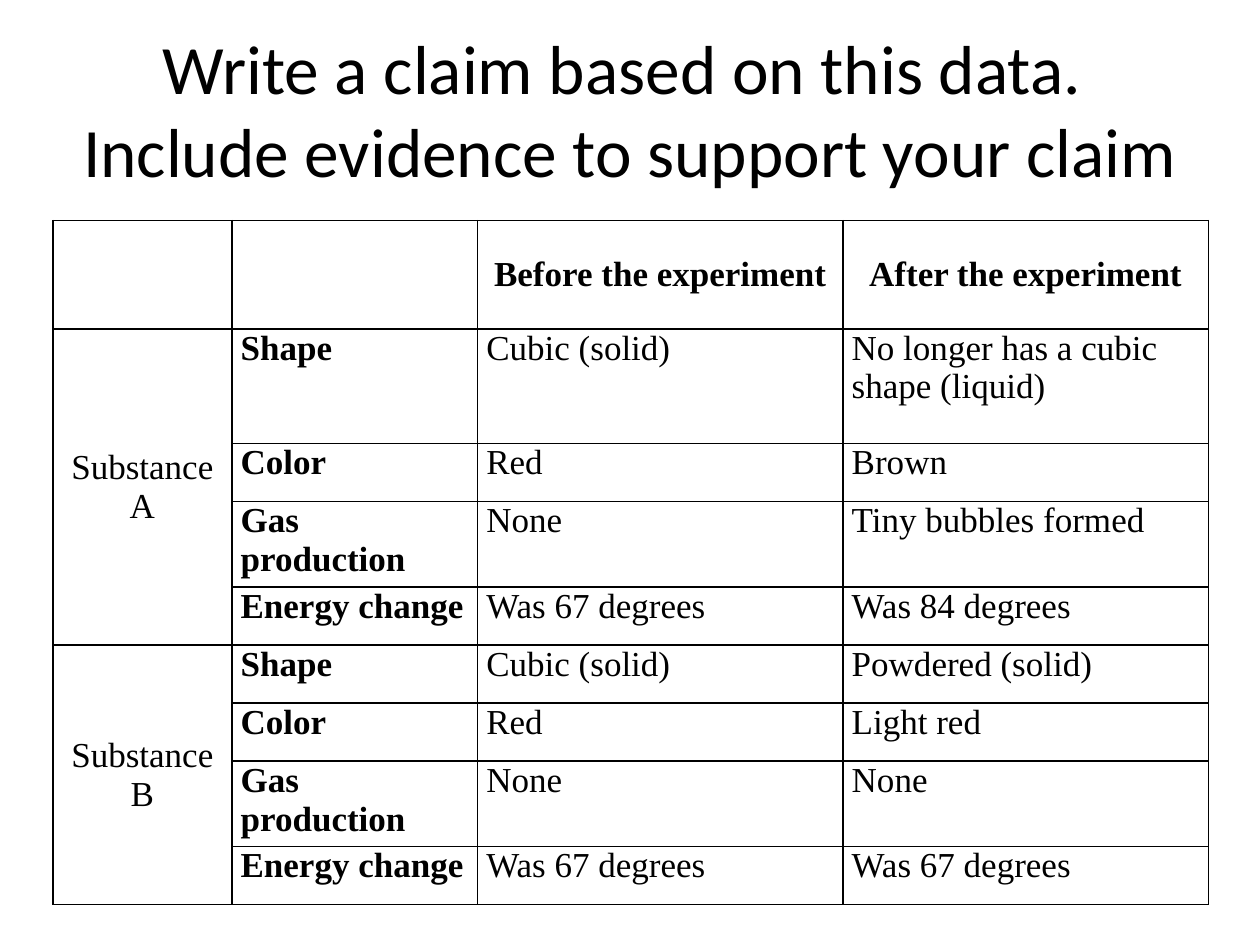
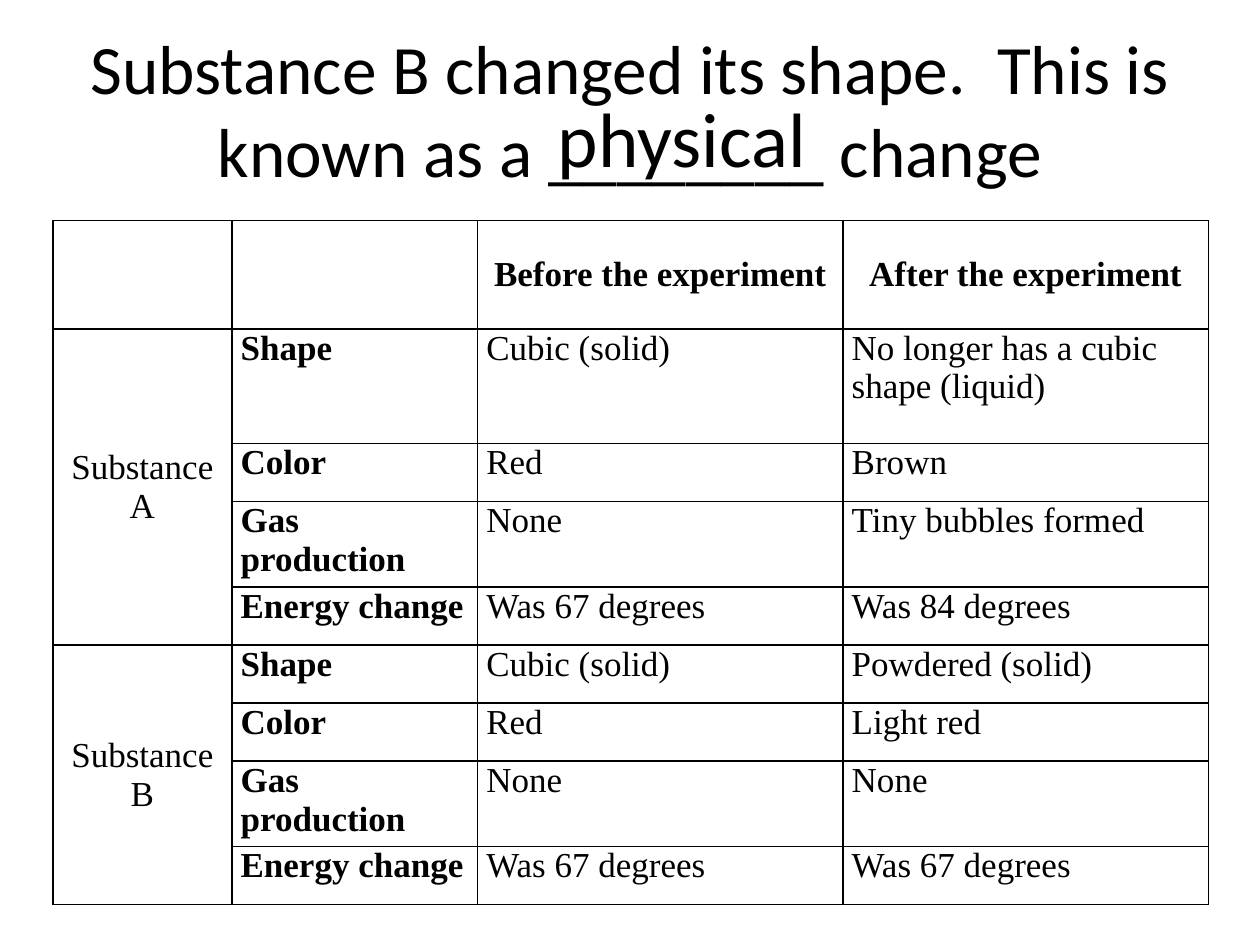
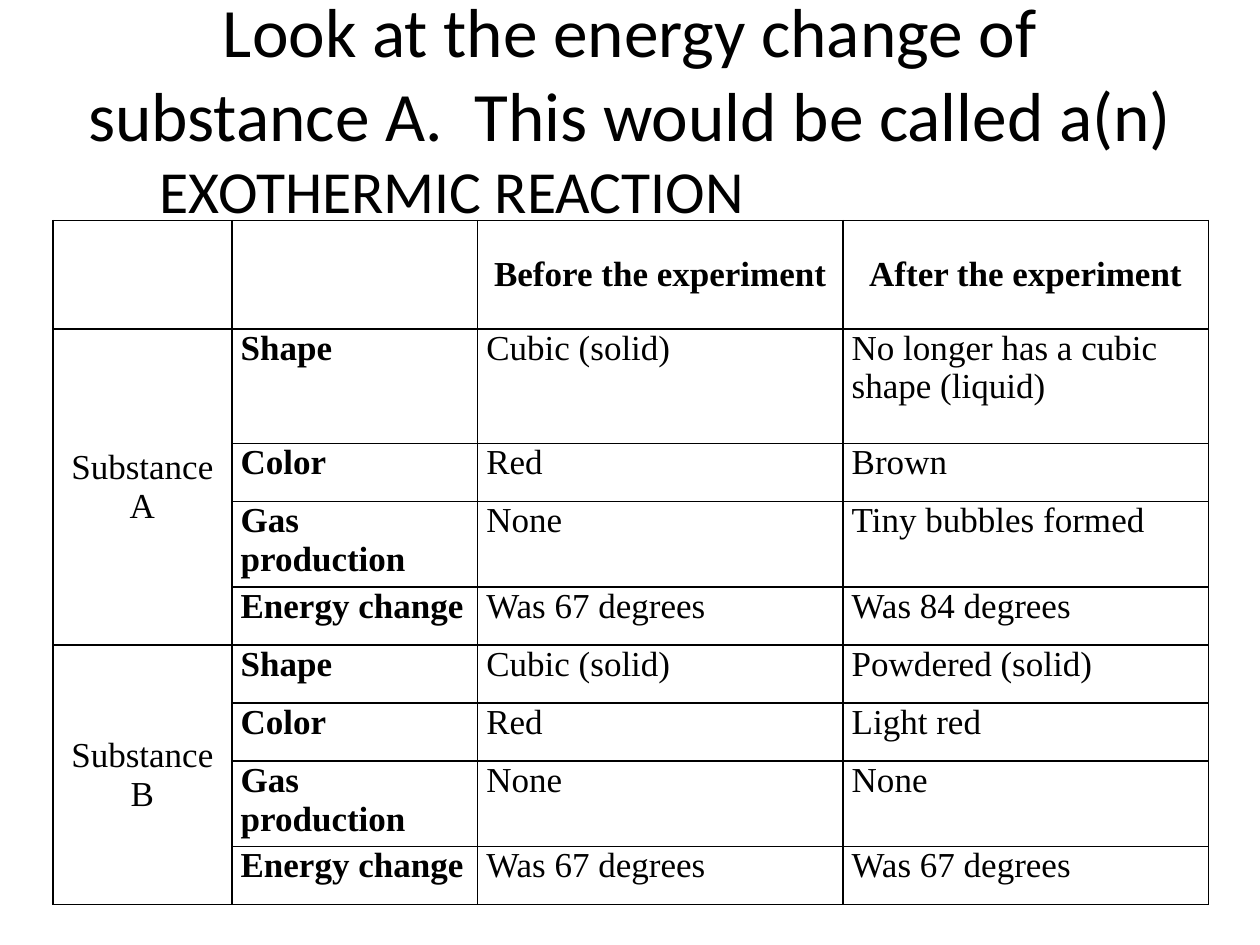
from dataclasses import dataclass

from lxml.etree import SubElement
from pptx import Presentation
from pptx.dml.color import RGBColor
from pptx.enum.text import MSO_ANCHOR, PP_ALIGN
from pptx.oxml.ns import qn
from pptx.slide import Slide
from pptx.table import _Cell
from pptx.text.text import TextFrame
from pptx.util import Inches, Pt

BLACK = RGBColor(0x00, 0x00, 0x00)
TITLE_FONT = "Calibri"
TABLE_FONT = "Times New Roman"
TITLE_SIZE = 39.6
TABLE_SIZE = 20
BORDER_WIDTH = Pt(1)

COLUMN_WIDTHS = (1.42, 1.95, 2.9, 2.9)
ROW_HEIGHTS = (0.86, 0.91, 0.46, 0.68, 0.46, 0.46, 0.46, 0.68, 0.46)
HEADINGS = ("", "", "Before the experiment", "After the experiment")
PROPERTIES = ("Shape", "Color", "Gas production", "Energy change")
BEFORE = ("Cubic (solid)", "Red", "None", "Was 67 degrees")
AFTER = {
    "Substance A": ("No longer has a cubic shape (liquid)", "Brown",
                    "Tiny bubbles formed", "Was 84 degrees"),
    "Substance B": ("Powdered (solid)", "Light red", "None", "Was 67 degrees"),
}


@dataclass(frozen=True)
class Answer:
    text: str
    left: float
    top: float
    width: float
    height: float
    size: float


@dataclass(frozen=True)
class Question:
    title: str
    title_height: float
    answer: Answer | None = None


QUESTIONS = (
    Question("Write a claim based on this data.  Include evidence to support your claim", 1.7),
    Question("Substance B changed its shape.  This is known as a ________ change", 1.7,
             Answer("physical", 4.33, 0.67, 2.33, 0.92, 44)),
    Question("Look at the energy change of substance A.  This would be called a(n)", 1.12,
             Answer("EXOTHERMIC REACTION", 1.17, 1.17, 5.5, 0.58, 34.1)),
)


def write_text(text_frame: TextFrame, text: str, font_name: str, size: float,
               bold: bool = False, centered: bool = False) -> None:
    text_frame.text = text
    text_frame.word_wrap = True
    paragraph = text_frame.paragraphs[0]
    paragraph.alignment = PP_ALIGN.CENTER if centered else PP_ALIGN.LEFT
    for run in paragraph.runs:
        run.font.name = font_name
        run.font.size = Pt(size)
        run.font.bold = bold
        run.font.color.rgb = BLACK


def add_title(slide: Slide, question: Question) -> None:
    shape = slide.shapes.add_textbox(Inches(0.5), Inches(0.3), Inches(9),
                                     Inches(question.title_height))
    write_text(shape.text_frame, question.title, TITLE_FONT, TITLE_SIZE, centered=True)
    shape.text_frame.vertical_anchor = MSO_ANCHOR.MIDDLE
    shape.text_frame.margin_bottom = Inches(0.63)


def add_answer(slide: Slide, answer: Answer) -> None:
    shape = slide.shapes.add_textbox(Inches(answer.left), Inches(answer.top),
                                     Inches(answer.width), Inches(answer.height))
    write_text(shape.text_frame, answer.text, TITLE_FONT, answer.size)


def format_cell(cell: _Cell) -> None:
    cell.margin_left = cell.margin_right = Inches(0.07)
    cell.margin_top = cell.margin_bottom = 0
    cell.fill.background()
    properties = cell._tc.get_or_add_tcPr()
    for position, side in enumerate(("a:lnL", "a:lnR", "a:lnT", "a:lnB")):
        line = SubElement(properties, qn(side), w=str(BORDER_WIDTH))
        fill = SubElement(line, qn("a:solidFill"))
        SubElement(fill, qn("a:srgbClr"), val=str(BLACK))
        properties.insert(position, line)


def table_rows() -> list[tuple[str, ...]]:
    rows = [HEADINGS]
    for substance, after in AFTER.items():
        names = (substance,) + ("",) * (len(PROPERTIES) - 1)
        rows.extend(zip(names, PROPERTIES, BEFORE, after))
    return rows


def add_results_table(slide: Slide) -> None:
    table = slide.shapes.add_table(
        len(ROW_HEIGHTS), len(COLUMN_WIDTHS), Inches(0.42), Inches(1.75),
        Inches(sum(COLUMN_WIDTHS)), Inches(sum(ROW_HEIGHTS))).table
    table.first_row = table.horz_banding = False
    for column, width in zip(table.columns, COLUMN_WIDTHS):
        column.width = Inches(width)
    for row, height in zip(table.rows, ROW_HEIGHTS):
        row.height = Inches(height)
    for row_index, texts in enumerate(table_rows()):
        for column_index, text in enumerate(texts):
            cell = table.cell(row_index, column_index)
            format_cell(cell)
            if text:
                centered = row_index == 0 or column_index == 0
                bold = row_index == 0 or column_index == 1
                write_text(cell.text_frame, text, TABLE_FONT, TABLE_SIZE, bold, centered)
                cell.vertical_anchor = MSO_ANCHOR.MIDDLE if centered else MSO_ANCHOR.TOP
    span = len(PROPERTIES)
    for first in range(1, len(ROW_HEIGHTS), span):
        table.cell(first, 0).merge(table.cell(first + span - 1, 0))


def main() -> None:
    presentation = Presentation()
    presentation.slide_width = Inches(10)
    presentation.slide_height = Inches(7.5)
    for question in QUESTIONS:
        slide = presentation.slides.add_slide(presentation.slide_layouts[6])
        add_title(slide, question)
        add_results_table(slide)
        if question.answer:
            add_answer(slide, question.answer)
    presentation.save("out.pptx")


if __name__ == "__main__":
    main()
